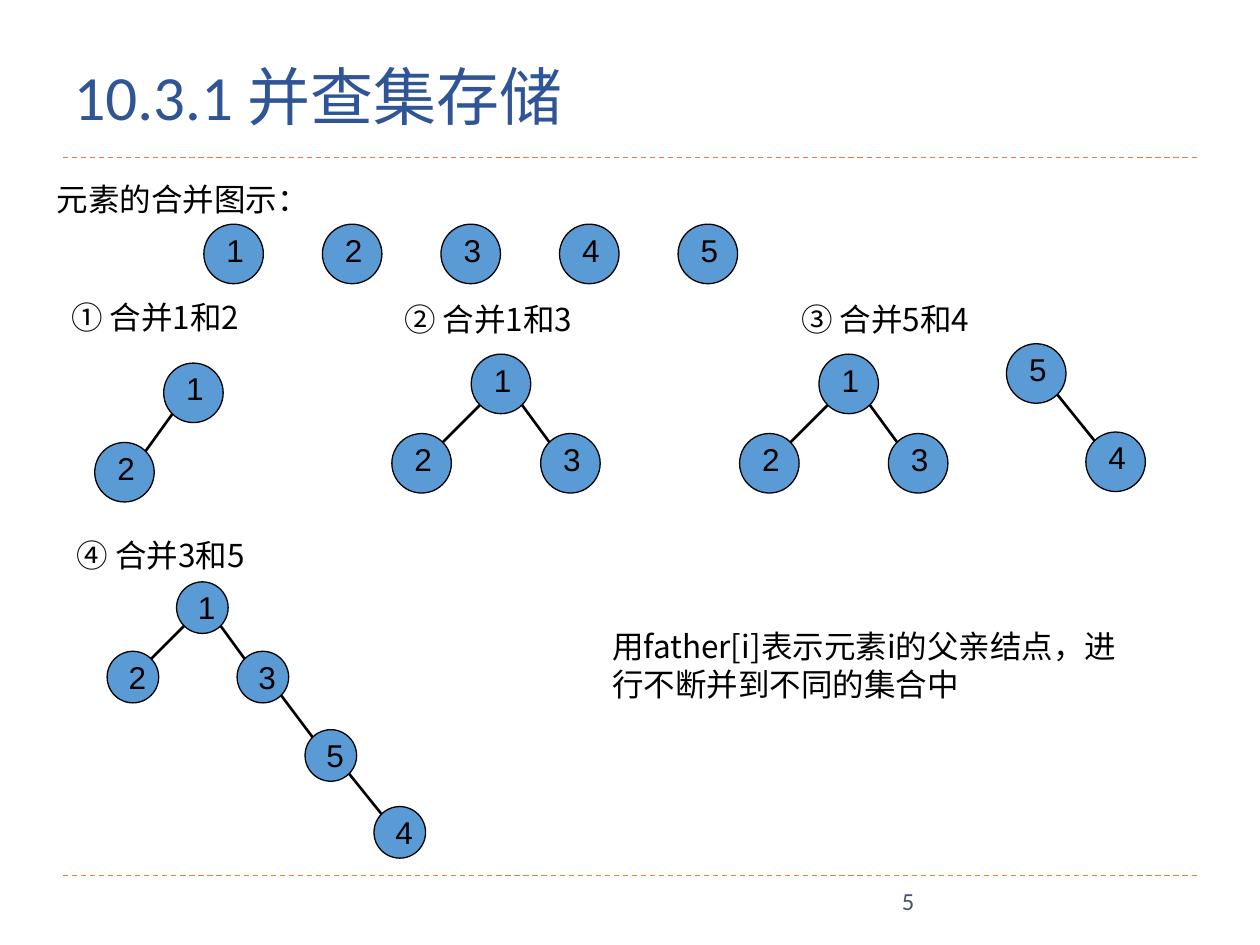
from lxml import etree
from pptx import Presentation
from pptx import util as u
from pptx.dml.color import RGBColor
from pptx.enum import dml, shapes, text
from pptx.oxml.ns import qn

COLORS = {"title": "2F5597", "ink": "000000", "node": "5B9BD5",
          "rule": "ED7D31", "number": "44546A"}
CHINESE_FONT = "Noto Sans CJK SC"
DIAGONAL = 0.5 ** 0.5

# Each tree: node diameter, {value: (left, top)}, [(parent, child)], in cm
TREES = [
    (1.2, {str(i + 1): (4.11 + 2.39 * i, 4.52) for i in range(5)}, []),
    (1.2, {"1": (3.3, 7.32), "2": (1.91, 8.92)}, ["12"]),
    (1.2, {"1": (9.5, 7.14), "2": (7.9, 8.74), "3": (10.9, 8.74)}, ["12", "13"]),
    (1.2, {"1": (16.51, 7.14), "2": (14.91, 8.74), "3": (17.91, 8.74),
           "5": (20.29, 6.93), "4": (21.89, 8.71)}, ["12", "13", "54"]),
    (1.04, {"1": (3.56, 11.73), "2": (2.16, 13.13), "3": (4.78, 13.13),
            "5": (6.15, 14.71), "4": (7.54, 16.26)}, ["12", "13", "35", "54"]),
]

LABELS = [
    ("元素的合并图示：", 0.89, 3.5, 23.6),
    ("① 合并1和2", 1.19, 5.89, 5.3),
    ("② 合并1和3", 7.9, 5.92, 5.3),
    ("③ 合并5和4", 15.9, 5.92, 5.3),
    ("④ 合并3和5", 1.3, 10.69, 4.5),
    ("用father[i]表示元素i的父亲结点，进行不断并到不同的集合中", 12.09, 12.52, 10.74),
]


def color(name):
    return RGBColor.from_string(COLORS[name])


def write(shape, words, frame_format=None, font="Calibri", size=18, ink="ink"):
    """Put one left-aligned paragraph into a shape."""
    frame = shape.text_frame
    values = {"word_wrap": True, "auto_size": text.MSO_AUTO_SIZE.NONE,
              **(frame_format or {})}
    for name, value in values.items():
        setattr(frame, name, value)
    paragraph = frame.paragraphs[0]
    paragraph.alignment = text.PP_ALIGN.LEFT
    run = paragraph.add_run()
    run.text = words
    for name, value in {"name": font, "size": u.Pt(size), "bold": False}.items():
        setattr(run.font, name, value)
    run.font.color.rgb = color(ink)
    latin = run.font._element.find(qn("a:latin"))
    east_asian = etree.Element(qn("a:ea"), typeface=CHINESE_FONT)
    latin.addnext(east_asian)


def add_title(slide, words):
    title = slide.shapes.title
    place = {"left": 1.23, "top": 1.02, "width": 16.7, "height": 1.8}
    for name, value in place.items():
        setattr(title, name, u.Cm(value))
    write(title, words, {"vertical_anchor": text.MSO_ANCHOR.MIDDLE},
          size=36, ink="title")


def add_label(slide, words, left, top, width, height=1.02, **style):
    box = slide.shapes.add_textbox(u.Cm(left), u.Cm(top), u.Cm(width), u.Cm(height))
    write(box, words, **style)


def add_line(slide, start, end, ink="ink", width=1.5, dash=None):
    line = slide.shapes.add_connector(
        shapes.MSO_CONNECTOR.STRAIGHT, *(u.Cm(value) for value in (*start, *end)))
    line.line.color.rgb = color(ink)
    line.line.width = u.Pt(width)
    if dash:
        line.line.dash_style = dash
    etree.SubElement(line._element.spPr, qn("a:effectLst"))


def add_node(slide, value, left, top, diameter):
    node = slide.shapes.add_shape(shapes.MSO_SHAPE.OVAL, u.Cm(left), u.Cm(top),
                                  u.Cm(diameter), u.Cm(diameter))
    node.shadow.inherit = False
    node.fill.solid()
    node.fill.fore_color.rgb = color("node")
    node.line.color.rgb = color("ink")
    node.line.width = u.Pt(0.75)
    # The digit sits about 0.5 cm below the top, whatever the diameter
    write(node, value, {"margin_left": u.Cm(0.28), "margin_right": 0, "margin_top": 0,
                        "margin_bottom": u.Cm(diameter - 1.02),
                        "vertical_anchor": text.MSO_ANCHOR.MIDDLE}, font="Arial")


def add_tree(slide, diameter, nodes, edges):
    """Draw nodes, with edges joining the diagonal points of their rims."""
    for value, (left, top) in nodes.items():
        add_node(slide, value, left, top, diameter)
    radius = diameter / 2
    reach = radius * DIAGONAL
    for parent, child in edges:
        (x1, y1), (x2, y2) = nodes[parent], nodes[child]
        side = reach if x2 > x1 else -reach
        add_line(slide, (x1 + radius + side, y1 + radius + reach),
                 (x2 + radius - side, y2 + radius - reach))


def main():
    presentation = Presentation()
    presentation.slide_width, presentation.slide_height = u.Cm(25.4), u.Cm(19.05)
    slide = presentation.slides.add_slide(presentation.slide_layouts[5])
    for top in (3.18, 17.65):
        add_line(slide, (1.27, top), (24.13, top), "rule", 0.75,
                 dml.MSO_LINE.DASH)
    add_title(slide, "10.3.1 并查集存储")
    for words, left, top, width in LABELS:
        height = 1.8 if len(words) > 20 else 1.02
        add_label(slide, words, left, top, width, height, font=CHINESE_FONT)
    for tree in TREES:
        add_tree(slide, *tree)
    add_label(slide, "5", 17.93, 17.65, 5.72, size=14, ink="number",
              frame_format={"vertical_anchor": text.MSO_ANCHOR.MIDDLE})
    presentation.save("out.pptx")


if __name__ == "__main__":
    main()
